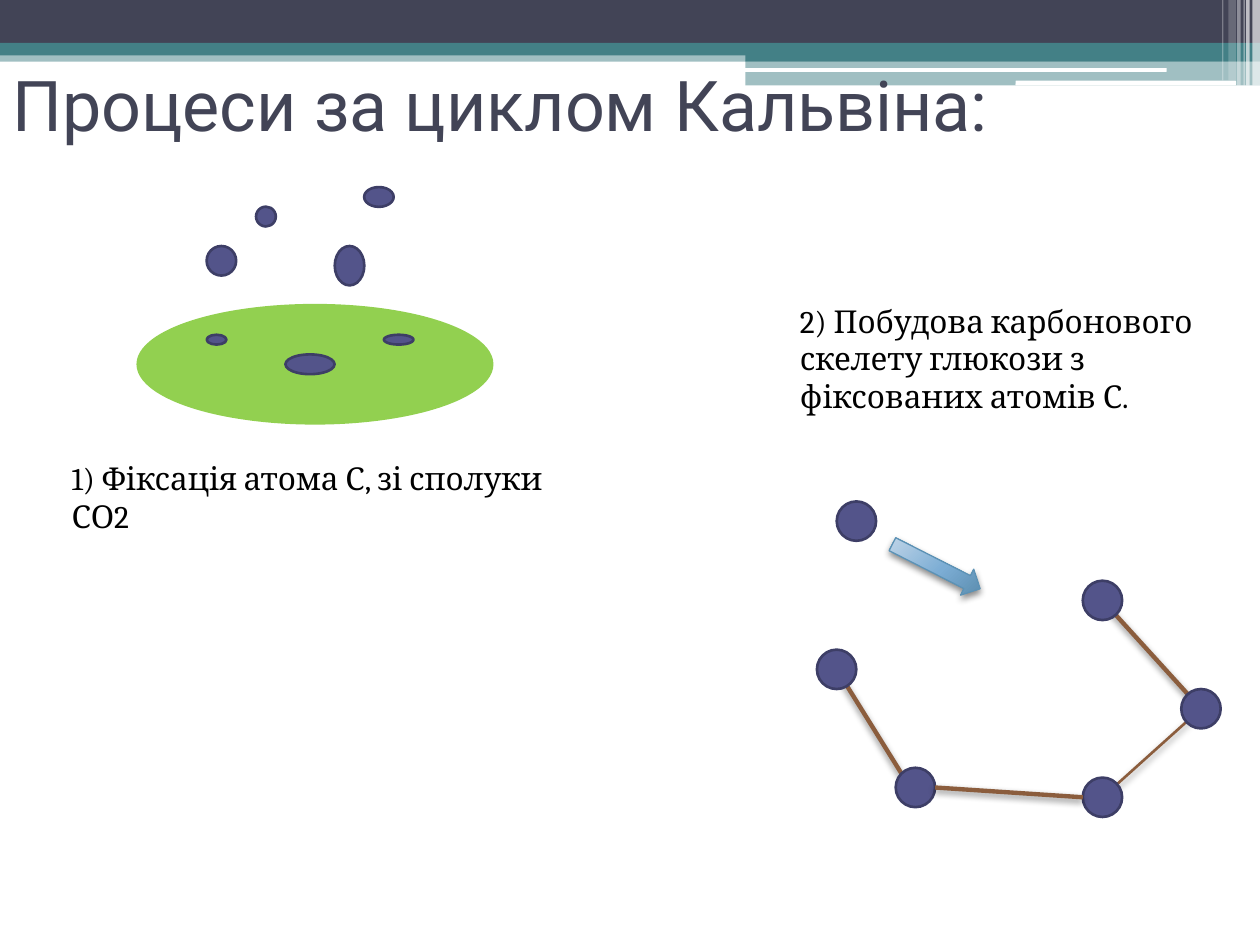
import math
from dataclasses import dataclass

import pptx
import pptx.dml.color
import pptx.enum.shapes
import pptx.enum.text
import pptx.oxml
import pptx.oxml.ns
import pptx.util
from lxml import etree

Pt = pptx.util.Pt
SHAPE = pptx.enum.shapes.MSO_SHAPE
ANCHOR = pptx.enum.text.MSO_ANCHOR


@dataclass(frozen=True)
class Theme:
    ink: str = "424456"
    teal: str = "438086"
    white: str = "FFFFFF"
    black: str = "000000"
    leaf: str = "92D050"
    atom: str = "53548A"
    atom_edge: str = "3D3E66"
    bond: str = "8B5D3D"
    arrow_edge: str = "5C92B5"
    arrow_stops: tuple = ((0, "C7D9EA"), (55, "7CADD4"), (100, "5688A9"))
    title_font: str = "Roboto"
    body_font: str = "Cambria"
    title_size: float = 40
    body_size: float = 18


THEME = Theme()
CARBON_SIZE = 22.5

HEADER_BANDS = [
    (0, 28.8, 720, 6.5, THEME.teal, 50),
    (0, 0, 720, 24.5, THEME.ink, 100),
    (0, 24.5, 720, 7.2, THEME.teal, 100),
    (426, 28.1, 294, 7, THEME.teal, 100),
    (426, 34.6, 294, 14.2, THEME.teal, 50),
]
HEADER_RULES = [(425.5, 38.9, 241.2, 2.2), (580.3, 46.1, 126, 2.7)]
HEADER_STRIPES = [
    (715.7, 4.3, 49, 65),
    (712.1, 2, 49, 65),
    (710.6, 0.7, 49, 60),
    (707, 2, 49, 40),
    (702, 4.3, 46, 20),
    (698.4, 0.7, 46, 30),
]
GAS_ATOMS = [
    (163.1, 202.5, 28.1, 11.3),
    (118.1, 191.3, 11.3, 5.6),
    (219.4, 191.3, 16.9, 5.6),
    (146.3, 118.1, 11.3, 11.3),
    (191.3, 140.6, 16.9, 22.5),
    (118.1, 140.6, 16.9, 16.9),
    (208.1, 106.9, 16.9, 11.3),
]
FREE_CARBON = (489.4, 297.8)
CHAIN = [(478.1, 382.5), (523.1, 450), (630, 455.6), (686.3, 405), (630, 343.1)]


def rgb(color):
    return pptx.dml.color.RGBColor.from_string(color)


def add_figure(slide, kind, box, fill, opacity=100, edge=None, edge_width=1.5):
    figure = slide.shapes.add_shape(kind, *map(Pt, box))
    figure.shadow.inherit = False
    figure.fill.solid()
    figure.fill.fore_color.rgb = rgb(fill)
    if opacity < 100:
        color = figure.fill._xPr.find(".//" + pptx.oxml.ns.qn("a:srgbClr"))
        etree.SubElement(color, pptx.oxml.ns.qn("a:alpha"), val=str(opacity * 1000))
    if edge:
        figure.line.color.rgb = rgb(edge)
        figure.line.width = Pt(edge_width)
    else:
        figure.line.fill.background()
    return figure


def add_atom(slide, box):
    add_figure(slide, SHAPE.OVAL, box, THEME.atom, edge=THEME.atom_edge)


def add_carbon(slide, center):
    corner = [c - CARBON_SIZE / 2 for c in center]
    add_atom(slide, (*corner, CARBON_SIZE, CARBON_SIZE))


def cast_shadow(element, opacity=45, blur=4):
    for old in element.findall(pptx.oxml.ns.qn("a:effectLst")):
        element.remove(old)
    element.append(pptx.oxml.parse_xml(
        f'<a:effectLst {pptx.oxml.ns.nsdecls("a")}>'
        f'<a:outerShdw blurRad="{Pt(blur)}" dist="{Pt(2)}" dir="5400000" rotWithShape="0">'
        f'<a:srgbClr val="{THEME.black}"><a:alpha val="{opacity * 1000}"/></a:srgbClr>'
        '</a:outerShdw></a:effectLst>'))


def add_bond(slide, start, end, width=2.5, opacity=45, blur=4):
    bond = slide.shapes.add_connector(
        pptx.enum.shapes.MSO_CONNECTOR.STRAIGHT, *map(Pt, (*start, *end)))
    bond.line.color.rgb = rgb(THEME.bond)
    bond.line.width = Pt(width)
    cast_shadow(bond._element.spPr, opacity, blur)


def add_motion_arrow(slide, box, angle):
    arrow = add_figure(slide, SHAPE.RIGHT_ARROW, box, THEME.atom,
                       edge=THEME.arrow_edge, edge_width=0.75)
    arrow.rotation = angle
    properties = arrow._element.spPr
    stops = "".join(f'<a:gs pos="{place * 1000}"><a:srgbClr val="{color}"/></a:gs>'
                    for place, color in THEME.arrow_stops)
    gradient = pptx.oxml.parse_xml(
        f'<a:gradFill {pptx.oxml.ns.nsdecls("a")} rotWithShape="1"><a:gsLst>{stops}</a:gsLst>'
        '<a:path path="circle"><a:fillToRect l="-40000" t="-90000" r="140000" b="190000"/>'
        '</a:path></a:gradFill>')
    properties.replace(properties.find(pptx.oxml.ns.qn("a:solidFill")), gradient)
    cast_shadow(properties)


def add_text(slide, box, wording, font, size, color, anchor=ANCHOR.TOP):
    frame = slide.shapes.add_textbox(*map(Pt, box)).text_frame
    frame.word_wrap = True
    frame.vertical_anchor = anchor
    paragraph = frame.paragraphs[0]
    paragraph.text = wording
    paragraph.font.name = font
    paragraph.font.size = Pt(size)
    paragraph.font.color.rgb = rgb(color)


def add_header(slide):
    for *box, color, opacity in HEADER_BANDS:
        add_figure(slide, SHAPE.RECTANGLE, box, color, opacity)
    for box in HEADER_RULES:
        add_figure(slide, SHAPE.ROUNDED_RECTANGLE, box, THEME.white)
    for left, width, height, opacity in HEADER_STRIPES:
        add_figure(slide, SHAPE.RECTANGLE, (left, 0, width, height), THEME.white, opacity)


def add_fixation(slide):
    add_figure(slide, SHAPE.OVAL, (78.75, 174.4, 202.5, 67.5), THEME.leaf, edge=THEME.leaf)
    for box in GAS_ATOMS:
        add_atom(slide, box)
    add_text(slide, (33.8, 258.8, 309.4, 50.9), "1) Фіксація атома С, зі сполуки СО2",
             THEME.body_font, THEME.body_size, THEME.black)


def add_skeleton(slide):
    first, second, third, fourth, fifth = CHAIN
    radius = CARBON_SIZE / 2
    diagonal = radius * math.sqrt(0.5)
    add_bond(slide, first, (second[0] - diagonal, second[1] - diagonal))
    add_bond(slide, fourth, fifth)
    add_bond(slide, third, fourth, width=1.5, opacity=40, blur=4.1)
    for center in (FREE_CARBON, *CHAIN):
        add_carbon(slide, center)
    add_bond(slide, (second[0] + radius, second[1]), (third[0] - radius, third[1]))
    add_motion_arrow(slide, (506.9, 315.4, 56.2, 16.6), 26.9)
    add_text(slide, (450, 168.8, 270, 72.7),
             "2) Побудова карбонового скелету глюкози з фіксованих атомів С.",
             THEME.body_font, THEME.body_size, THEME.black)


def main():
    deck = pptx.Presentation()
    deck.slide_width, deck.slide_height = Pt(720), Pt(540)
    slide = deck.slides.add_slide(deck.slide_layouts[6])
    add_header(slide)
    add_text(slide, (0, 16.9, 648, 84), "Процеси за циклом Кальвіна:",
             THEME.title_font, THEME.title_size, THEME.ink, ANCHOR.MIDDLE)
    add_fixation(slide)
    add_skeleton(slide)
    deck.save("out.pptx")


if __name__ == "__main__":
    main()
